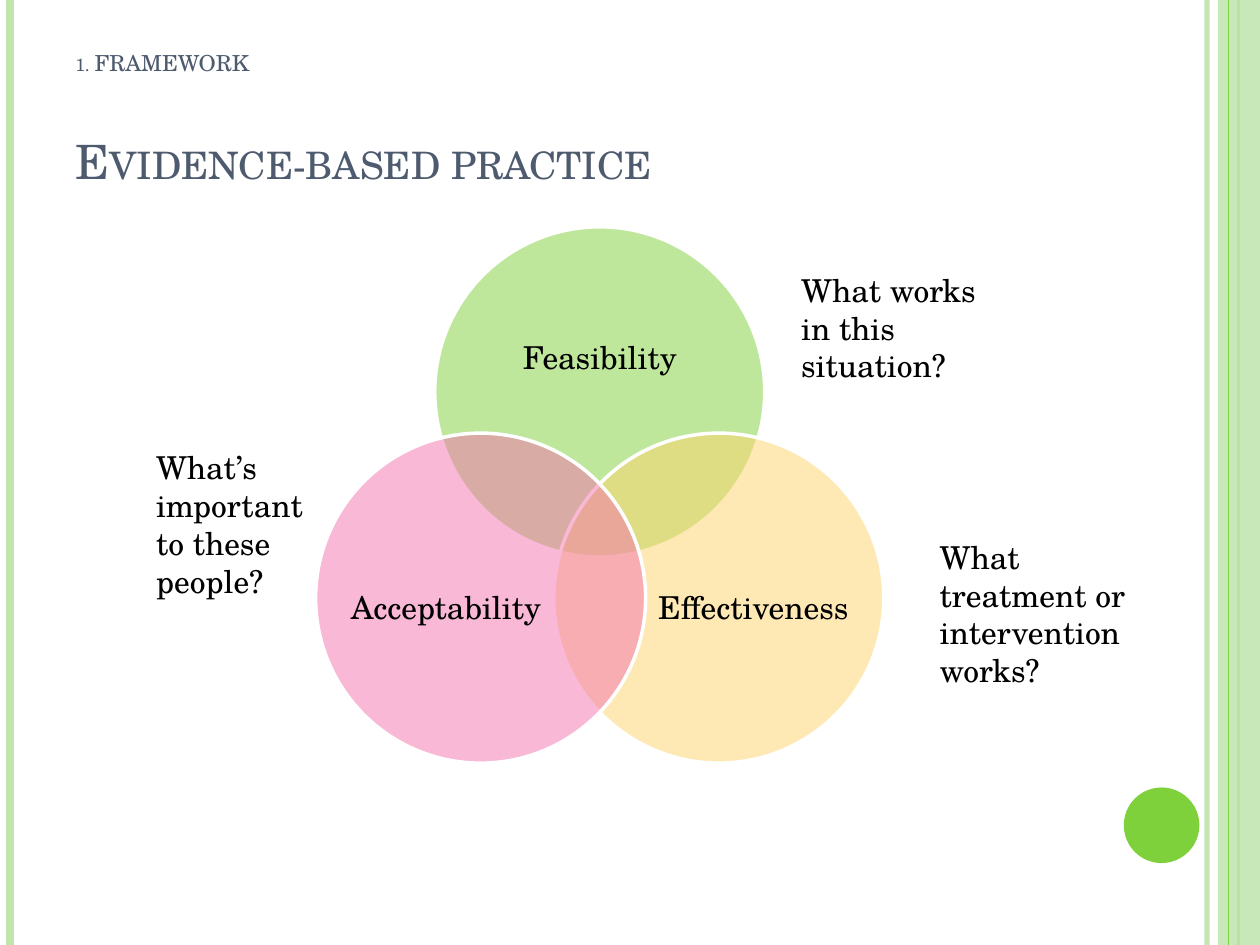
from math import cos, radians, sin

from lxml.etree import SubElement
from pptx import Presentation
from pptx.dml.color import RGBColor
from pptx.enum.shapes import MSO_CONNECTOR, MSO_SHAPE
from pptx.enum.text import MSO_ANCHOR as ANCHOR, PP_ALIGN as ALIGN
from pptx.oxml.ns import qn
from pptx.util import Pt

FONT = "TeX Gyre Schola"
W, H = 720, 540
GREEN, PALE, SLATE = "7FD13B", "C0E5AF", "4E5B6F"

# text, size, space before
TITLE = [("1. FRAMEWORK", 12.6, 0), ("Evidence-based practice", 27, 32)]

# label, colour, angle around the centre, label box relative to its circle
VENN = [
    ("Feasibility", GREEN, -90, (25.2, 33, 138.2, 85)),
    ("Effectiveness", "FED46C", 30, (57.6, 48.8, 113, 103.7)),
    ("Acceptability", "F273AF", 150, (18, 48.8, 113, 103.7)),
]
CENTER_X, CENTER_Y, ORBIT, DIAMETER = 342.7, 302.5, 78.6, 188.6

# text, left, top, width
QUESTIONS = [
    ("What treatment or intervention works?", 529.9, 303.8, 141.8),
    ("What works in this situation?", 450.7, 151.2, 118.8),
    ("What’s important to these people?", 82.1, 252.7, 118.8),
]

# x, colour, width, opacity
RULES_BEHIND = [(689.8, PALE, 3, 93), (5.8, PALE, 4.5, 100), (707.8, GREEN, 1.5, 100)]
RULE_FRONT = (702, GREEN, 0.75, 100)


def paint(fill, color, opacity=100):
    fill.solid()
    fill.fore_color.rgb = RGBColor.from_string(color)
    if opacity < 100:
        clr = fill._xPr.find(qn("a:solidFill"))[0]
        SubElement(clr, qn("a:alpha"), val=str(opacity * 1000))


def add_rule(x, color, width, opacity):
    """Full-height vertical line."""
    c = s.shapes.add_connector(MSO_CONNECTOR.STRAIGHT, Pt(x), 0, Pt(x), Pt(H))
    c.line.width = Pt(width)
    paint(c.line.fill, color, opacity)
    SubElement(c._element.spPr, qn("a:effectLst"))


def add_shape(kind, box, color, opacity=100, outline=None):
    sp = s.shapes.add_shape(kind, *map(Pt, box))
    sp.shadow.inherit = False
    paint(sp.fill, color, opacity)
    if outline:
        paint(sp.line.fill, outline)
        sp.line.width = Pt(2)
    else:
        sp.line.fill.background()


def add_text(box, lines, color="000000", anchor=ANCHOR.TOP, align=ALIGN.LEFT,
             inset=True, spacing=1.0, small_caps=False):
    tf = s.shapes.add_textbox(*map(Pt, box)).text_frame
    tf.word_wrap = True
    tf.vertical_anchor = anchor
    if not inset:
        tf.margin_left = tf.margin_top = tf.margin_right = tf.margin_bottom = 0
    for i, (text, size, before) in enumerate(lines):
        p = tf.add_paragraph() if i else tf.paragraphs[0]
        p.text = text
        p.alignment = align
        p.line_spacing = spacing
        p.space_before = Pt(before)
        p.font.name, p.font.size = FONT, Pt(size)
        p.font.color.rgb = RGBColor.from_string(color)
        if small_caps:
            p.runs[0].font._element.set("cap", "small")


prs = Presentation()
prs.slide_width, prs.slide_height = Pt(W), Pt(H)
s = prs.slides.add_slide(prs.slide_layouts[6])

for rule in RULES_BEHIND:
    add_rule(*rule)
add_shape(MSO_SHAPE.RECTANGLE, (696, 0, 24, H), PALE, 87)
add_rule(*RULE_FRONT)
add_shape(MSO_SHAPE.OVAL, (642.2, 450, 43.2, 43.2), GREEN)

add_text((36, 21.6, 588, 90), TITLE, SLATE, ANCHOR.BOTTOM, small_caps=True)

for label, color, angle, (dx, dy, w, h) in VENN:
    x = CENTER_X + ORBIT * cos(radians(angle)) - DIAMETER / 2
    y = CENTER_Y + ORBIT * sin(radians(angle)) - DIAMETER / 2
    add_shape(MSO_SHAPE.OVAL, (x, y, DIAMETER, DIAMETER), color, 50, "FFFFFF")
    add_text((x + dx, y + dy, w, h), [(label, 18, 0)], anchor=ANCHOR.MIDDLE,
             align=ALIGN.CENTER, inset=False, spacing=0.9)

for text, x, y, w in QUESTIONS:
    add_text((x, y, w, 72.7), [(text, 18, 0)])

prs.save("out.pptx")
